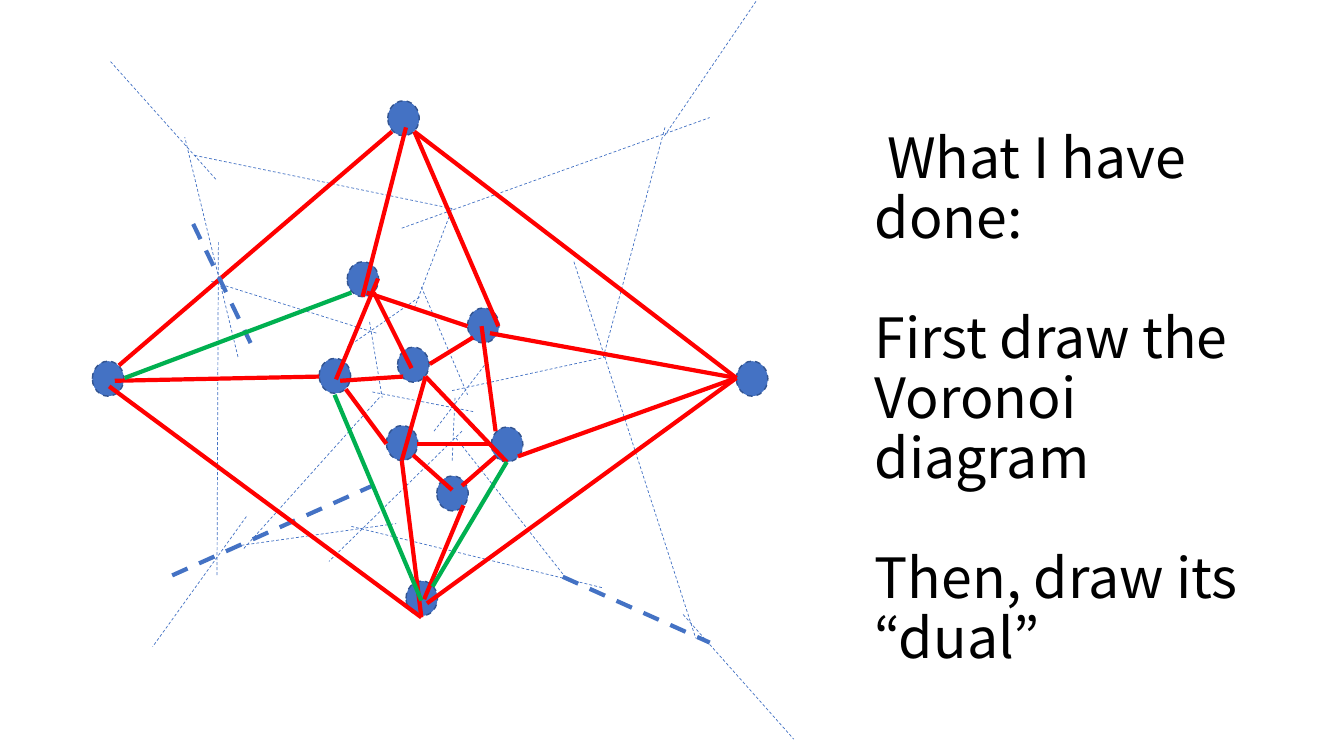
from lxml.etree import SubElement
from pptx import Presentation
from pptx.dml.color import RGBColor
from pptx.enum.dml import MSO_LINE_DASH_STYLE as Dash
from pptx.enum.shapes import MSO_CONNECTOR as Connector, MSO_SHAPE as Shape
from pptx.enum.text import MSO_ANCHOR as Anchor, PP_ALIGN as Align
from pptx.oxml.ns import qn
from pptx.util import Pt

BLUE = RGBColor(0x44, 0x72, 0xC4)
DARK_BLUE = RGBColor(0x32, 0x54, 0x91)
RED = RGBColor(0xFF, 0x00, 0x00)
GREEN = RGBColor(0x00, 0xB0, 0x50)
BLACK = RGBColor(0x00, 0x00, 0x00)
FONT = "Noto Sans CJK JP"

# Boxes: left, top, width, height in points
DIAGRAM_BOX = (0, 0, 576, 540)
STEPS_BOX = (617.76, 96.48, 300.96, 379.44)

STEPS = [
    " What I have done:",
    "First draw the Voronoi diagram",
    "Then, draw its “dual”",
]

SITE_SIZE = (22.5, 25)
SITES = [
    (66, 258), (277, 72), (526, 258), (228, 256), (248, 187), (334, 220),
    (284, 248), (276, 304), (290, 415), (351, 305), (312, 340),
]

# Lines: start x, start y, end x, end y inside the diagram box
VORONOI_EDGES = [
    (79, 44, 155, 129), (156, 173, 155, 412), (540, 1, 474, 98),
    (488, 439, 567, 528), (251, 376, 431, 420), (410, 187, 497, 456),
    (287, 163, 507, 84), (475, 91, 431, 255), (433, 255, 323, 279),
    (296, 220, 323, 149), (139, 111, 323, 149), (301, 205, 334, 282),
    (151, 201, 269, 238), (170, 255, 132, 98), (248, 248, 300, 212),
    (264, 230, 273, 284), (271, 284, 174, 392), (176, 369, 109, 462),
    (266, 280, 338, 294), (330, 308, 235, 401), (402, 410, 325, 312),
    (323, 329, 325, 284), (346, 261, 310, 308), (169, 390, 283, 374),
]
SOUTH_BOLD_EDGES = [(402, 412, 507, 459), (123, 411, 266, 347)]
WEST_BOLD_EDGES = [(138, 160, 179, 245)]
DUAL_EDGES = [
    (280, 94, 85, 261), (290, 91, 259, 212), (301, 441, 78, 276),
    (228, 269, 82, 272), (270, 199, 240, 271), (247, 278, 276, 317),
    (323, 350, 295, 325), (526, 270, 370, 326), (344, 233, 354, 308),
    (354, 326, 330, 347), (526, 270, 350, 238), (526, 270, 296, 94),
    (526, 270, 305, 431), (294, 263, 267, 209), (338, 241, 307, 260),
    (362, 330, 304, 269), (288, 269, 243, 272), (351, 317, 298, 317),
    (334, 233, 262, 209), (304, 269, 287, 329), (331, 361, 303, 428),
    (287, 329, 301, 441), (296, 94, 356, 233),
]
ADDED_DUAL_EDGES = [
    (239, 282, 301, 429), (89, 270, 251, 209), (362, 330, 309, 419),
]

# Back to front: edges, colour, width, dash
EDGE_LAYERS = [
    (VORONOI_EDGES, BLUE, 0.5, Dash.DASH),
    (SOUTH_BOLD_EDGES, BLUE, 3, Dash.DASH),
    (DUAL_EDGES, RED, 3, Dash.SOLID),
    (WEST_BOLD_EDGES, BLUE, 3, Dash.DASH),
    (ADDED_DUAL_EDGES, GREEN, 3, Dash.SOLID),
]


def style_line(line, colour, width, dash):
    line.color.rgb = colour
    line.width = Pt(width)
    line.dash_style = dash


def add_site(page, left, top):
    site = page.shapes.add_shape(Shape.OVAL, Pt(left), Pt(top), *map(Pt, SITE_SIZE))
    site.shadow.inherit = False
    site.fill.solid()
    site.fill.fore_color.rgb = BLUE
    style_line(site.line, DARK_BLUE, 1, Dash.DASH)


def add_edge(page, ends, colour, width, dash):
    edge = page.shapes.add_connector(Connector.STRAIGHT, *map(Pt, ends))
    style_line(edge.line, colour, width, dash)
    SubElement(edge.line._get_or_add_ln().getparent(), qn("a:effectLst"))


def add_diagram(page, box):
    """Draw the sites, the Voronoi edges and the dual edges."""
    left, top = box[:2]
    for x, y in SITES:
        add_site(page, left + x, top + y)
    for edges, colour, width, dash in EDGE_LAYERS:
        for x1, y1, x2, y2 in edges:
            ends = (left + x1, top + y1, left + x2, top + y2)
            add_edge(page, ends, colour, width, dash)


def add_steps(page, box):
    frame = page.shapes.add_textbox(*map(Pt, box)).text_frame
    frame.word_wrap = True
    frame.vertical_anchor = Anchor.MIDDLE
    for index, step in enumerate(STEPS):
        para = frame.add_paragraph() if index else frame.paragraphs[0]
        para.alignment = Align.LEFT
        para.line_spacing = 0.9
        para.space_before = Pt(43 if index else 0)
        span = para.add_run()
        span.text = step
        span.font.name = FONT
        span.font.size = Pt(39.6)
        span.font.color.rgb = BLACK


def main():
    deck = Presentation()
    deck.slide_width, deck.slide_height = Pt(960), Pt(540)
    page = deck.slides.add_slide(deck.slide_layouts[6])
    add_steps(page, STEPS_BOX)
    add_diagram(page, DIAGRAM_BOX)
    deck.save("out.pptx")


if __name__ == "__main__":
    main()
